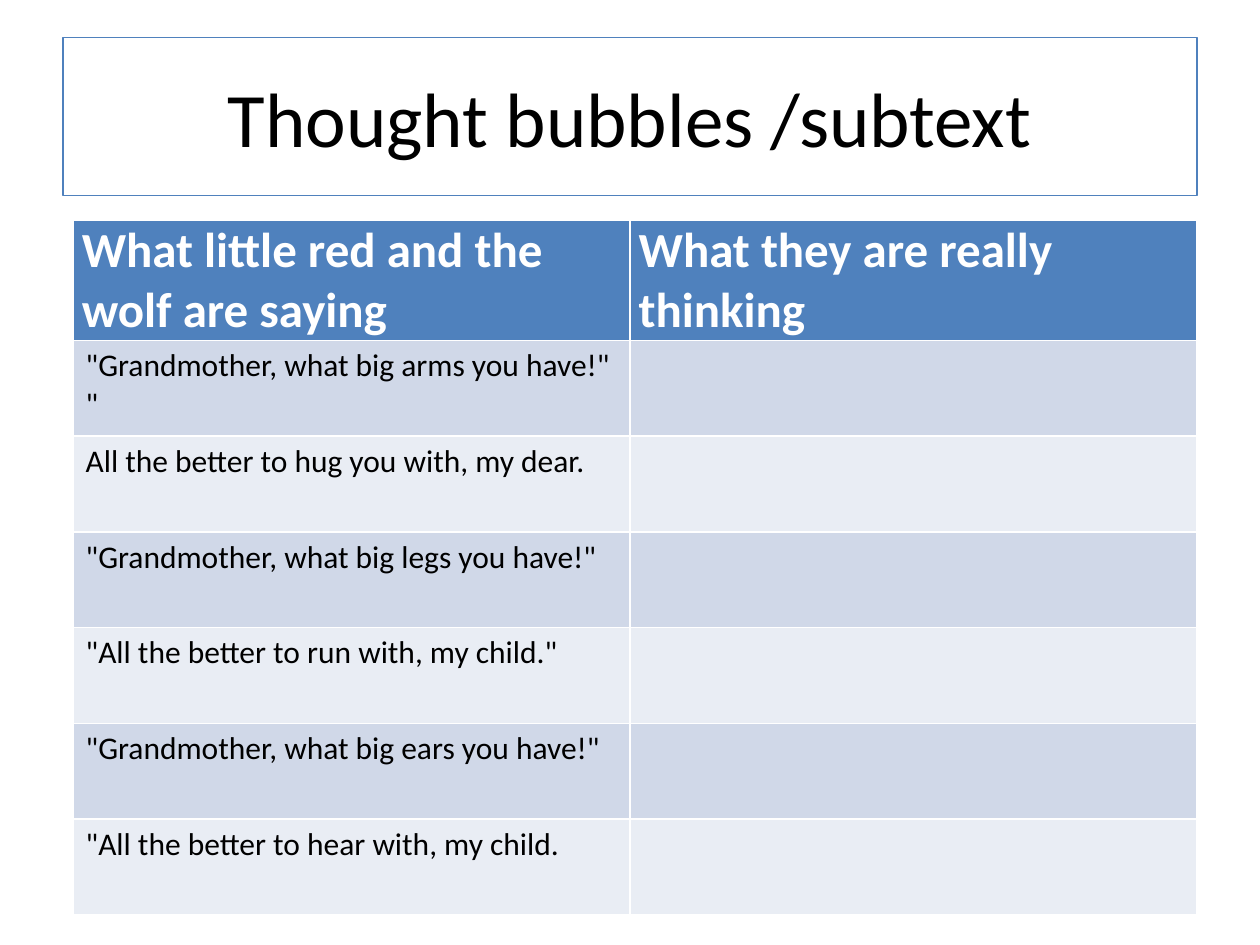
from pptx import Presentation
from pptx import util as u
from pptx.dml.color import RGBColor
from pptx.enum import text

BLUE = RGBColor(0x4F, 0x81, 0xBD)
BANDS = [RGBColor(0xD0, 0xD8, 0xE8), RGBColor(0xE9, 0xED, 0xF4)]
WHITE = RGBColor(0xFF, 0xFF, 0xFF)
BLACK = RGBColor(0, 0, 0)

HEADING = "Thought bubbles /subtext"
COLUMNS = ["What little red and the wolf are saying", "What they are really thinking"]
SAYINGS = [
    '"Grandmother, what big arms you have!"\n"',
    "All the better to hug you with, my dear.",
    '"Grandmother, what big legs you have!"',
    '"All the better to run with, my child."',
    '"Grandmother, what big ears you have!"',
    '"All the better to hear with, my child.',
]
ROWS = [COLUMNS] + [[saying, ""] for saying in SAYINGS]
WIDTHS = [4.42, 4.5]
ROW_HEIGHT = 0.76


def write(frame, words, size=18, color=BLACK, bold=False, align=text.PP_ALIGN.LEFT):
    frame.text = words
    for paragraph in frame.paragraphs:
        paragraph.alignment = align
        font = paragraph.font
        for run in paragraph.runs:
            font = run.font
        font.name = "Calibri"
        font.size = u.Pt(size)
        font.bold = bold
        font.color.rgb = color


def main():
    deck = Presentation()
    deck.slide_width, deck.slide_height = u.Inches(10), u.Inches(7.5)
    slide = deck.slides.add_slide(deck.slide_layouts[5])

    heading = slide.shapes.title
    heading.left, heading.top = u.Inches(0.5), u.Inches(0.3)
    heading.width, heading.height = u.Inches(9), u.Inches(1.25)
    heading.line.color.rgb = BLUE
    heading.line.width = u.Pt(0.75)
    heading.text_frame.vertical_anchor = text.MSO_ANCHOR.MIDDLE
    write(heading.text_frame, HEADING, size=44, align=text.PP_ALIGN.CENTER)

    dialogue = slide.shapes.add_table(
        len(ROWS), len(WIDTHS), u.Inches(0.58), u.Inches(1.75),
        u.Inches(sum(WIDTHS)), u.Inches(ROW_HEIGHT * len(ROWS))).table
    for column, width in zip(dialogue.columns, WIDTHS):
        column.width = u.Inches(width)
    for r, row in enumerate(ROWS):
        dialogue.rows[r].height = u.Inches(ROW_HEIGHT)
        for c, words in enumerate(row):
            cell = dialogue.cell(r, c)
            cell.fill.solid()
            if r == 0:
                cell.fill.fore_color.rgb = BLUE
                cell.margin_left = cell.margin_right = u.Inches(0.07)
                cell.margin_top = cell.margin_bottom = 0
                write(cell.text_frame, words, size=28, color=WHITE, bold=True)
            else:
                cell.fill.fore_color.rgb = BANDS[(r - 1) % 2]
                write(cell.text_frame, words)

    deck.save("out.pptx")


if __name__ == "__main__":
    main()
